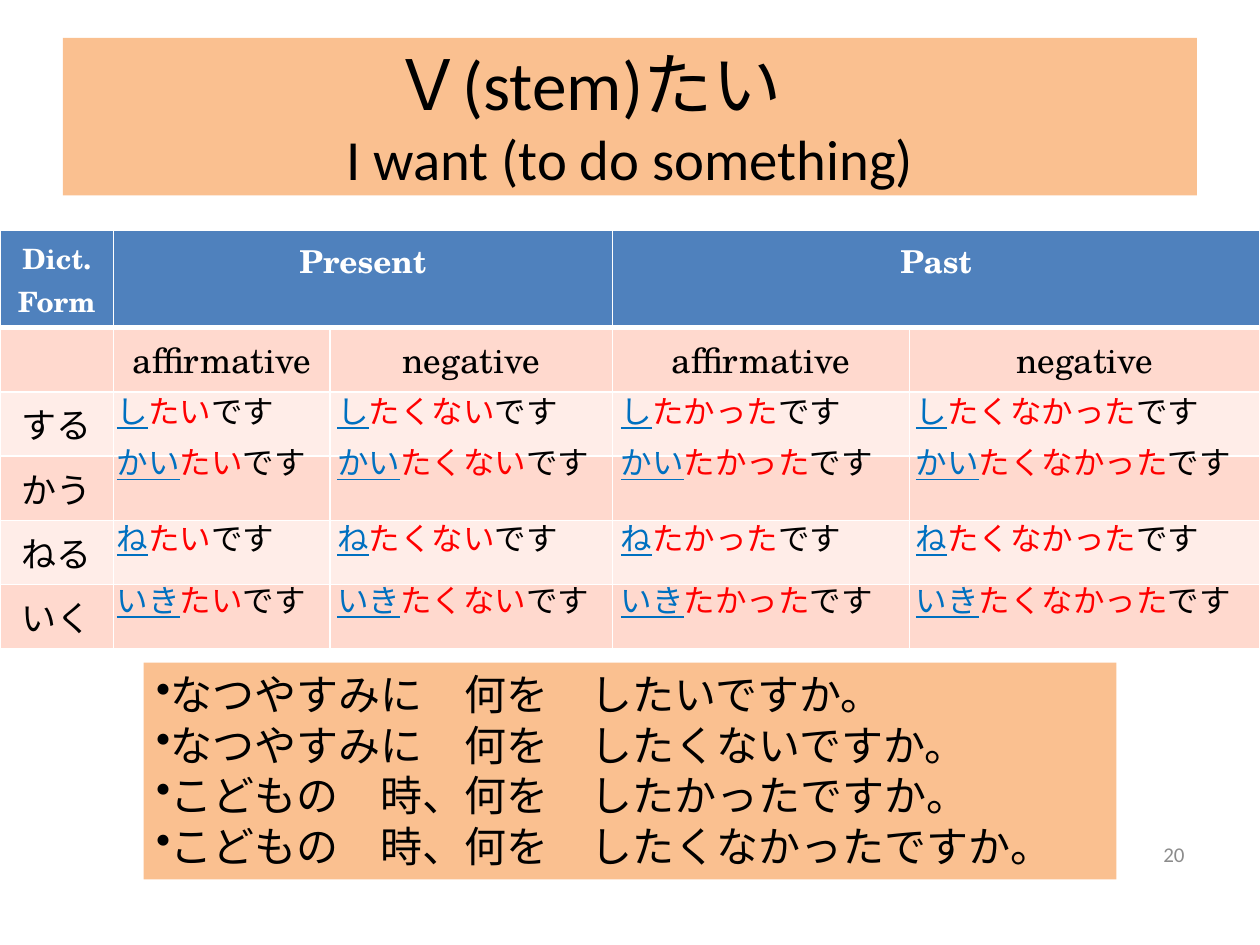
from lxml import etree
from pptx import Presentation
from pptx.dml.color import RGBColor
from pptx.enum import shapes, text
from pptx.oxml.ns import qn
from pptx.util import Inches, Pt

COLORS = {
    "orange": "FAC090", "header": "4F81BD", "pink": "FFD9CE", "pale": "FFEDE8",
    "white": "FFFFFF", "black": "000000", "gray": "8C8C8C",
    "stem": "0070C0", "ending": "FF0000",
}
SERIF = "TeX Gyre Schola"

TITLE = [("Ｖ(stem)たい\u3000 ", 39.6), ("I want (to do something)", 32.4)]
TENSES = ["Present", "Past"]
POLARITIES = ["affirmative", "negative"]
VERBS = [("する", "し", 3.06), ("かう", "かい", 3.47),
         ("ねる", "ね", 4.07), ("いく", "いき", 4.56)]  # form, stem, top
ENDINGS = [("たい", 0.83, 1.88), ("たくない", 2.58, 2.25),
           ("たかった", 4.83, 2.53), ("たくなかった", 7.17, 2.83)]  # left, width
QUESTIONS = ["なつやすみに　何を　したいですか。",
             "なつやすみに　何を　したくないですか。",
             "こどもの　時、何を　したかったですか。",
             "こどもの　時、何を　したくなかったですか。"]
COLUMN_WIDTHS = [0.9, 1.72, 2.24, 2.36, 2.78]
ROW_HEIGHTS = [0.77] + [0.51] * 5


def color(name):
    return RGBColor.from_string(COLORS[name])


def write(paragraph, words, size=18, font="Arial", ink="black", bold=False,
          underline=False, align=text.PP_ALIGN.LEFT):
    paragraph.alignment = align
    run = paragraph.add_run()
    run.text = words
    run.font.size = Pt(size)
    run.font.name = font
    run.font.bold = bold
    run.font.underline = underline
    run.font.color.rgb = color(ink)


def add_text_frame(slide, left, top, width, height, anchor=text.MSO_ANCHOR.TOP):
    box = slide.shapes.add_textbox(*map(Inches, (left, top, width, height)))
    box.text_frame.word_wrap = True
    box.text_frame.vertical_anchor = anchor
    return box.text_frame


def add_panel(slide, left, top, width, height, anchor):
    panel = slide.shapes.add_shape(shapes.MSO_SHAPE.RECTANGLE,
                                   *map(Inches, (left, top, width, height)))
    panel.shadow.inherit = False
    panel.fill.solid()
    panel.fill.fore_color.rgb = color("orange")
    panel.line.fill.background()
    panel.text_frame.word_wrap = True
    panel.text_frame.vertical_anchor = anchor
    return panel.text_frame


def style_cell(cell, fill, top=1, bottom=1):
    """Fill a cell and give it white borders, widths in points."""
    properties = cell._tc.get_or_add_tcPr()
    for side, width in zip("LRTB", (1, 1, top, bottom)):
        line = etree.SubElement(properties, qn(f"a:ln{side}"), w=str(Pt(width)))
        solid = etree.SubElement(line, qn("a:solidFill"))
        etree.SubElement(solid, qn("a:srgbClr"), val=COLORS["white"])
    cell.fill.solid()
    cell.fill.fore_color.rgb = color(fill)


def add_conjugation_table(slide):
    table = slide.shapes.add_table(
        len(ROW_HEIGHTS), len(COLUMN_WIDTHS), 0, Inches(1.83),
        Inches(sum(COLUMN_WIDTHS)), Inches(sum(ROW_HEIGHTS))).table
    for column, width in zip(table.columns, COLUMN_WIDTHS):
        column.width = Inches(width)
    for r, height in enumerate(ROW_HEIGHTS):
        table.rows[r].height = Inches(height)
        fill = "header" if r == 0 else ("pink" if r % 2 else "pale")
        for cell in table.rows[r].cells:
            style_cell(cell, fill, top=3 if r == 1 else 1, bottom=3 if r == 0 else 1)

    def label(row, column, words, **style):
        write(table.cell(row, column).text_frame.paragraphs[0], words,
              align=text.PP_ALIGN.CENTER, **style)

    label(0, 0, "Dict. Form", size=16, font=SERIF, ink="white", bold=True)
    for i, tense in enumerate(TENSES):
        first = 1 + i * len(POLARITIES)
        table.cell(0, first).merge(table.cell(0, first + 1))
        label(0, first, tense, font=SERIF, ink="white", bold=True)
        for j, polarity in enumerate(POLARITIES):
            label(1, first + j, polarity, size=20, font=SERIF)
    for row, (form, _, _) in enumerate(VERBS, start=2):
        label(row, 0, form, size=20)


def add_conjugations(slide):
    for ending, left, width in ENDINGS:
        for _, stem, top in VERBS:
            line = add_text_frame(slide, left, top, width, 0.4).paragraphs[0]
            write(line, stem, ink="stem", underline=True)
            write(line, ending, ink="ending")
            write(line, "です")


def add_title(slide):
    title = add_panel(slide, 0.5, 0.3, 9, 1.25, text.MSO_ANCHOR.MIDDLE).paragraphs[0]
    for i, (words, size) in enumerate(TITLE):
        if i:
            title.add_line_break()
        write(title, words, size=size, font="Calibri", align=text.PP_ALIGN.CENTER)


def add_questions(slide):
    frame = add_panel(slide, 1.14, 5.26, 7.72, 1.72, text.MSO_ANCHOR.TOP)
    for i, question in enumerate(QUESTIONS):
        paragraph = frame.add_paragraph() if i else frame.paragraphs[0]
        write(paragraph, question, size=24)
        etree.SubElement(paragraph._p.get_or_add_pPr(), qn("a:buChar"), char="•")


def main():
    deck = Presentation()
    deck.slide_width, deck.slide_height = Inches(10), Inches(7.5)
    slide = deck.slides.add_slide(deck.slide_layouts[6])
    number = add_text_frame(slide, 7.17, 6.58, 2.33, 0.4, text.MSO_ANCHOR.MIDDLE)
    write(number.paragraphs[0], "20", size=12, font="Calibri", ink="gray",
          align=text.PP_ALIGN.RIGHT)
    add_conjugation_table(slide)
    add_conjugations(slide)
    add_title(slide)
    add_questions(slide)
    deck.save("out.pptx")


if __name__ == "__main__":
    main()
